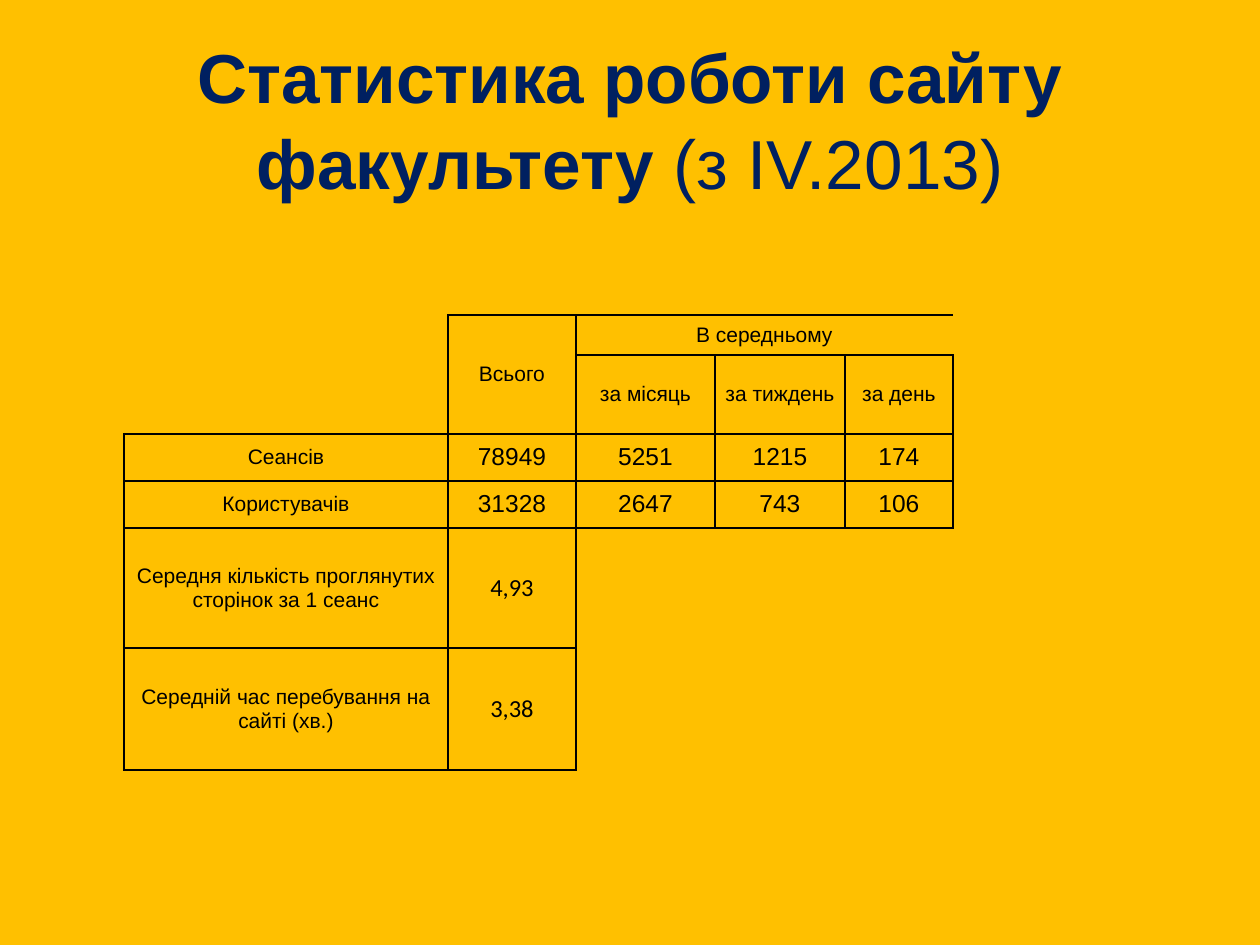
from dataclasses import dataclass

from lxml import etree
from pptx import Presentation
from pptx import util as u
from pptx.dml.color import RGBColor
from pptx.enum import text
from pptx.oxml.ns import qn

PX = 914400 / 126  # EMU in one px
GOLD = RGBColor(0xFF, 0xC0, 0x00)
NAVY = RGBColor(0x00, 0x20, 0x60)
BLACK = RGBColor(0, 0, 0)

# Equal neighbours form one merged cell; "" is an empty, open cell
ALL, AVG = "Всього", "В середньому"
GRID = [
    ["", ALL, AVG, AVG, AVG],
    ["", ALL, "за місяць", "за тиждень", "за день"],
    ["Сеансів", "78949", "5251", "1215", "174"],
    ["Користувачів", "31328", "2647", "743", "106"],
    ["Середня кількість проглянутих сторінок за 1 сеанс", "4,93", "", "", ""],
    ["Середній час перебування на сайті (хв.)", "3,38", "", "", ""],
]
COLS = [324, 128, 139, 130, 108]
ROWS = [40, 79, 47, 47, 120, 122]


@dataclass
class Side:
    tag: str
    down: int
    right: int


SIDES = [Side("a:lnL", 0, -1), Side("a:lnR", 0, 1),
         Side("a:lnT", -1, 0), Side("a:lnB", 1, 0)]


def px(n: int) -> u.Emu:
    return u.Emu(round(n * PX))


def write(para, words: str, *, size: float, color: RGBColor = BLACK,
          font: str = "Arial", bold: bool = False) -> None:
    para.alignment = text.PP_ALIGN.CENTER
    run = para.add_run()
    run.text = words
    run.font.size = u.Pt(size)
    run.font.name = font
    run.font.bold = bold
    run.font.color.rgb = color


def label(row: int, col: int) -> str:
    if 0 <= row < len(ROWS) and 0 <= col < len(COLS):
        return GRID[row][col]
    return ""


def border(cell, row: int, col: int) -> None:
    """Draw a line wherever the neighbouring label differs."""
    props = cell._tc.get_or_add_tcPr()
    for side in SIDES:
        thick = col == 0 and (side.down or (side.right < 0 and row >= 4))
        line = etree.SubElement(props, qn(side.tag),
                                w=str(u.Pt(1.5 if thick else 1)))
        if label(row, col) == label(row + side.down, col + side.right):
            etree.SubElement(line, qn("a:noFill"))
        else:
            fill = etree.SubElement(line, qn("a:solidFill"))
            etree.SubElement(fill, qn("a:srgbClr"), val=str(BLACK))


def build_table(slide) -> None:
    frame = slide.shapes.add_table(len(ROWS), len(COLS), px(124), px(315),
                                   px(sum(COLS)), px(sum(ROWS)))
    table = frame.table
    table.first_row = table.horz_banding = False
    for col, width in zip(table.columns, COLS):
        col.width = px(width)
    for row, height in zip(table.rows, ROWS):
        row.height = px(height)

    table.cell(0, 1).merge(table.cell(1, 1))
    table.cell(0, 2).merge(table.cell(0, 4))
    for r, line in enumerate(GRID):
        for c, words in enumerate(line):
            cell = table.cell(r, c)
            border(cell, r, c)
            cell.fill.background()
            cell.margin_left = cell.margin_right = 0
            cell.margin_top = cell.margin_bottom = 0
            cell.vertical_anchor = text.MSO_ANCHOR.MIDDLE
            if words and not cell.is_spanned:
                data = r >= 2 and c >= 1
                write(cell.text_frame.paragraphs[0], words,
                      size=14 if data else 12,
                      font="Calibri" if r >= 4 and data else "Arial")


def build_title(slide) -> None:
    title = slide.shapes.title
    title.left, title.top = px(63), px(38)
    title.width, title.height = px(1134), px(158)
    frame = title.text_frame
    frame.word_wrap = True
    frame.auto_size = text.MSO_AUTO_SIZE.NONE
    frame.vertical_anchor = text.MSO_ANCHOR.MIDDLE
    para = frame.paragraphs[0]
    para.line_spacing = 1.04
    write(para, "Статистика роботи сайту факультету ", size=39.6,
          color=NAVY, bold=True)
    write(para, "(з IV.2013)", size=39.6, color=NAVY)


def main() -> None:
    deck = Presentation()
    deck.slide_width, deck.slide_height = px(1260), px(945)
    slide = deck.slides.add_slide(deck.slide_layouts[5])  # title only
    slide.background.fill.solid()
    slide.background.fill.fore_color.rgb = GOLD
    build_title(slide)
    build_table(slide)
    deck.save("out.pptx")


if __name__ == "__main__":
    main()
